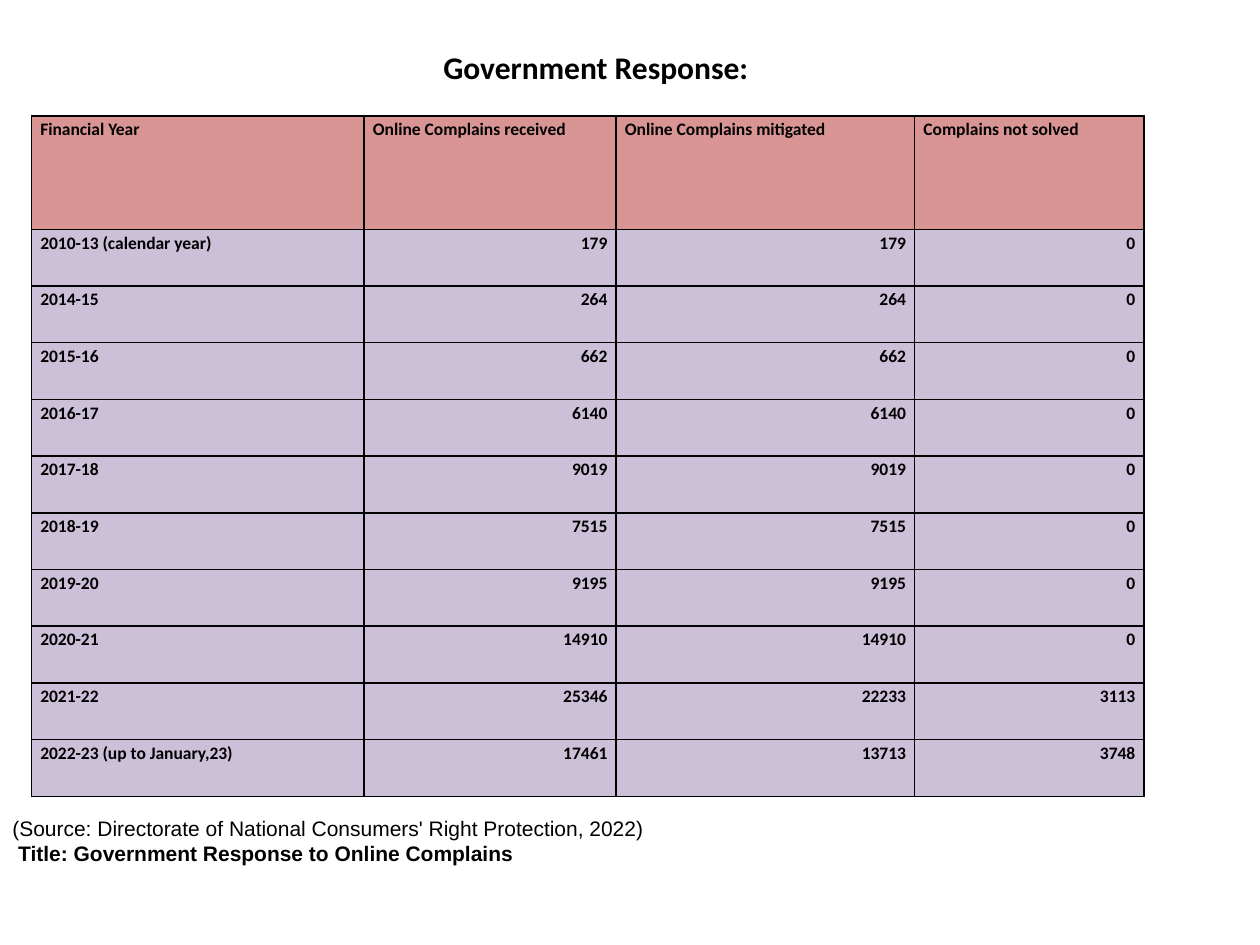
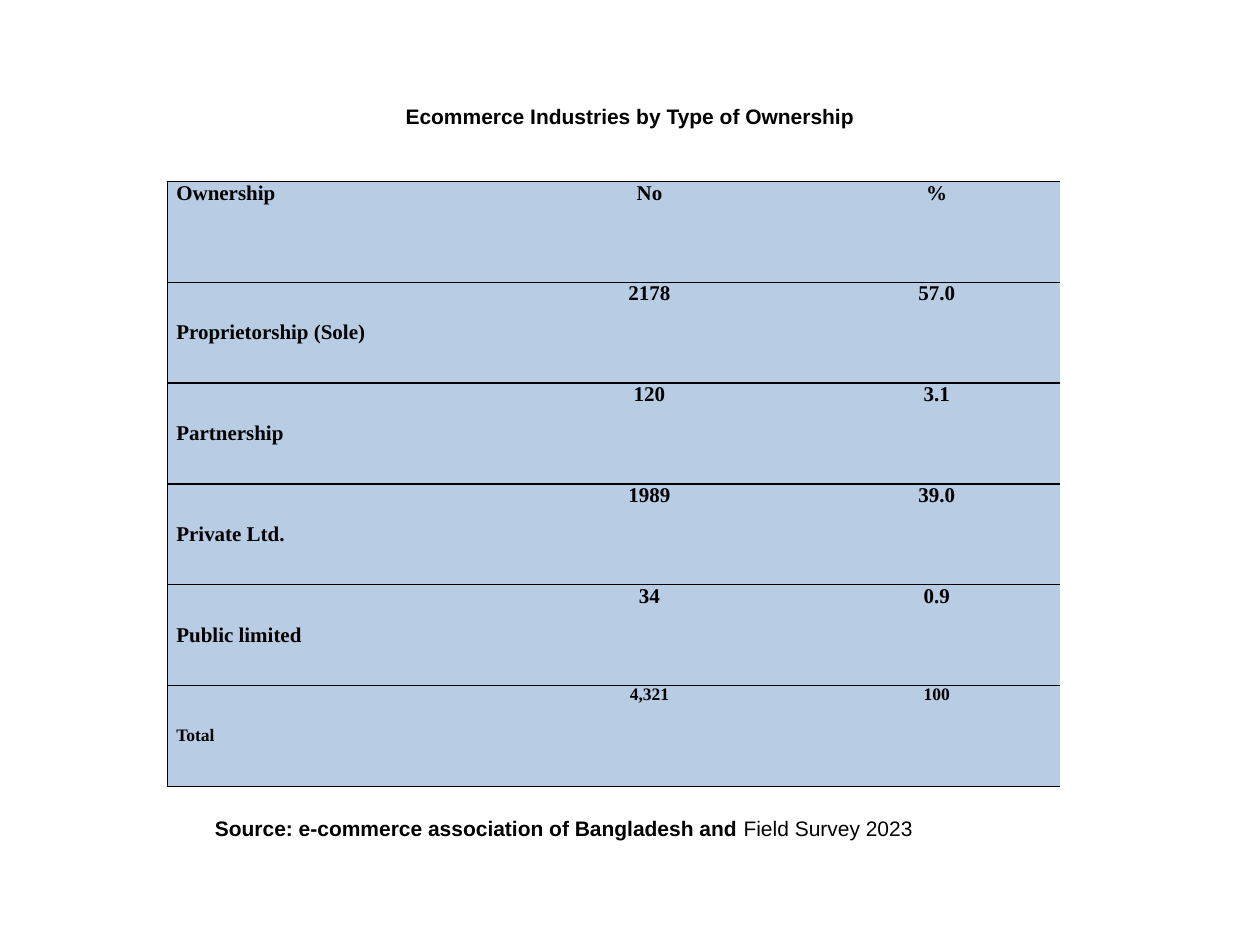
from lxml import etree
from pptx import Presentation
from pptx import util as u
from pptx.dml.color import RGBColor
from pptx.enum import shapes, text
from pptx.oxml import ns

COLOURS = {
    "ink": "000000",
    "paper": "FFFFFF",
    "response_head": "D99594",
    "response_body": "CCC0D9",
    "ownership": "B8CCE4",
}
LEFT, CENTRE, RIGHT = text.PP_ALIGN.LEFT, text.PP_ALIGN.CENTER, text.PP_ALIGN.RIGHT
TOP, MIDDLE = text.MSO_ANCHOR.TOP, text.MSO_ANCHOR.MIDDLE
BORDER_WIDTH = u.Pt(1)
CELL_MARGINS = {
    "margin_left": u.Inches(0.07), "margin_right": u.Inches(0.07),
    "margin_top": 0, "margin_bottom": 0,
}

RESPONSE_HEADINGS = ["Financial Year", "Online Complains received",
                     "Online Complains mitigated", "Complains not solved"]
COMPLAINTS = [
    ("2010-13 (calendar year)", 179, 179),
    ("2014-15", 264, 264),
    ("2015-16", 662, 662),
    ("2016-17", 6140, 6140),
    ("2017-18", 9019, 9019),
    ("2018-19", 7515, 7515),
    ("2019-20", 9195, 9195),
    ("2020-21", 14910, 14910),
    ("2021-22", 25346, 22233),
    ("2022-23 (up to January,23)", 17461, 13713),
]
OWNERSHIP = [
    ("Ownership", "No", "%"),
    ("Proprietorship (Sole)", "2178", "57.0"),
    ("Partnership", "120", "3.1"),
    ("Private Ltd.", "1989", "39.0"),
    ("Public limited", "34", "0.9"),
    ("Total", "4,321", "100"),
]


def rgb(name):
    return RGBColor.from_string(COLOURS[name])


def apply(target, values):
    for name, value in values.items():
        setattr(target, name, value)


def add_span(para, wording, font, size, bold=True):
    span = para.add_run()
    span.text = wording
    apply(span.font, {"name": font, "size": u.Pt(size), "bold": bold})
    span.font.color.rgb = rgb("ink")


def fill_text(frame, lines, font, size, align, anchor, wrap):
    """Write lines, each a list of (wording, bold) pairs."""
    apply(frame, {"word_wrap": wrap, "vertical_anchor": anchor})
    for index, line in enumerate(lines):
        para = frame.add_paragraph() if index else frame.paragraphs[0]
        para.alignment = align
        for wording, bold in line:
            add_span(para, wording, font, size, bold)


def add_text(page, box, lines, font="Arial", size=12, align=CENTRE,
             anchor=MIDDLE, wrap=True):
    label = page.shapes.add_textbox(*map(u.Inches, box))
    fill_text(label.text_frame, lines, font, size, align, anchor, wrap)


def set_borders(cell, sides):
    """Draw the named sides (of L, R, T, B) and clear the others."""
    properties = cell._tc.get_or_add_tcPr()
    for side in "LRTB":
        line = etree.SubElement(properties, ns.qn(f"a:ln{side}"), w=str(BORDER_WIDTH))
        if side in sides:
            solid = etree.SubElement(line, ns.qn("a:solidFill"))
            etree.SubElement(solid, ns.qn("a:srgbClr"), val=COLOURS["ink"])
        else:
            etree.SubElement(line, ns.qn("a:noFill"))


def add_grid(page, box, widths, heights, rows, style):
    """Add a table; style(row, column) gives the look of each cell."""
    frame = page.shapes.add_table(len(rows), len(widths), *map(u.Inches, box))
    table = frame.table
    apply(table, {"first_row": False, "horz_banding": False})
    for column, width in zip(table.columns, widths):
        column.width = u.Inches(width)
    for row, height in zip(table.rows, heights):
        row.height = u.Inches(height)
    for r, values in enumerate(rows):
        for c, value in enumerate(values):
            cell, look = table.cell(r, c), style(r, c)
            apply(cell, CELL_MARGINS)
            cell.vertical_anchor = look["anchor"]
            set_borders(cell, look["sides"])
            cell.fill.solid()
            cell.fill.fore_color.rgb = rgb(look["fill"])
            para = cell.text_frame.paragraphs[0]
            apply(para, {"alignment": look["align"], "line_spacing": look["spacing"]})
            add_span(para, str(value), look["font"], look["size"])


def response_style(row, column):
    return {
        "anchor": TOP, "sides": "LRTB", "spacing": 1.15,
        "fill": "response_body" if row else "response_head",
        "align": RIGHT if row and column else LEFT,
        "font": "Calibri", "size": 10,
    }


def ownership_style(row, column):
    return {
        "anchor": TOP if column or not row else MIDDLE,
        "sides": "TB" if column else "LTB", "spacing": 1.0,
        "fill": "ownership",
        "align": CENTRE if column else LEFT,
        "font": "Times New Roman",
        "size": 10 if row == len(OWNERSHIP) - 1 else 12,
    }


def add_source_band(page, box, lines):
    band = page.shapes.add_shape(shapes.MSO_SHAPE.RECTANGLE, *map(u.Inches, box))
    band.shadow.inherit = False
    band.fill.solid()
    band.fill.fore_color.rgb = rgb("paper")
    band.line.fill.background()
    fill_text(band.text_frame, lines, "Arial", 12, LEFT, MIDDLE, True)


def build_response(page):
    rows = [RESPONSE_HEADINGS]
    rows += [(year, received, solved, received - solved)
             for year, received, solved in COMPLAINTS]
    add_grid(page, (0.25, 0.92, 8.83, 5.42), [2.64, 2, 2.37, 1.82],
             [0.9] + [0.45] * len(COMPLAINTS), rows, response_style)
    add_text(page, (3.42, 0.33, 2.64, 0.4), [[("Government Response:", True)]],
             font="Calibri", size=18, align=LEFT, anchor=TOP, wrap=False)
    add_source_band(page, (0, 6.42, 10, 0.5), [
        [("(Source: Directorate of National Consumers' Right Protection, 2022)", False)],
        [(" Title: Government Response to Online Complains", True)],
    ])


def build_ownership(page):
    add_grid(page, (1.33, 1.44, 7.08, 4.8), [2.52, 2.61, 1.95],
             [0.8] * len(OWNERSHIP), OWNERSHIP, ownership_style)
    add_text(page, (0, 0.67, 10, 0.5),
             [[("Ecommerce Industries by Type of Ownership", True)]])
    add_text(page, (1.58, 6.42, 5.79, 0.3), [[
        ("Source: e-commerce association of Bangladesh and ", True),
        ("Field Survey 2023", False),
    ]], wrap=False)


def main():
    deck = Presentation()
    apply(deck, {"slide_width": u.Inches(10), "slide_height": u.Inches(7.5)})
    for build in (build_response, build_ownership):
        build(deck.slides.add_slide(deck.slide_layouts[6]))
    deck.save("out.pptx")


if __name__ == "__main__":
    main()
